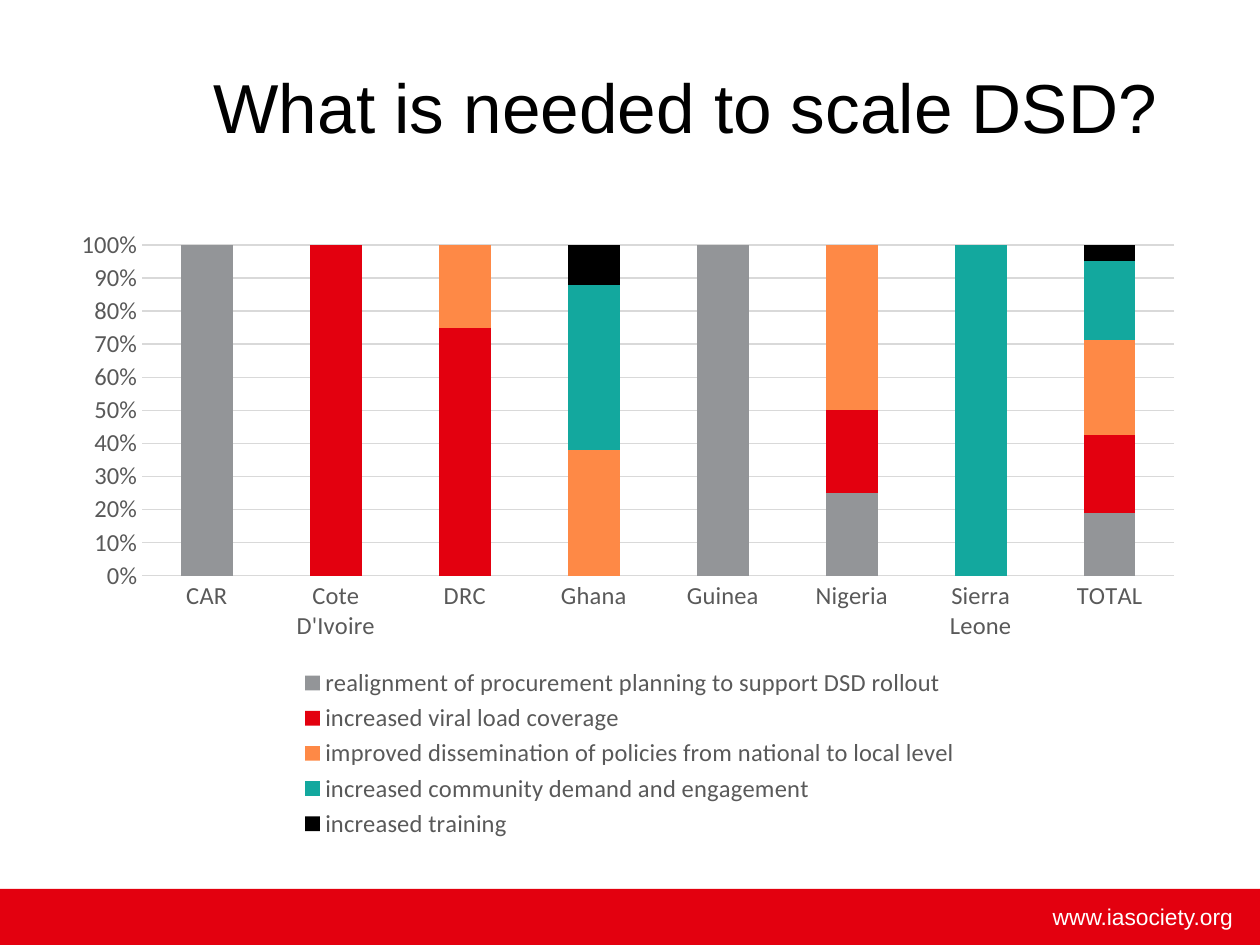
from lxml import etree
from pptx import Presentation
from pptx.chart.data import CategoryChartData
from pptx.dml.color import RGBColor
from pptx.enum.chart import XL_CHART_TYPE as ChartType, XL_LEGEND_POSITION as LegendPosition
from pptx.enum.chart import XL_TICK_MARK as TickMark
from pptx.enum.shapes import MSO_SHAPE as Preset
from pptx.enum.text import MSO_ANCHOR as Anchor, PP_ALIGN as Align
from pptx.oxml.ns import qn
from pptx.util import Pt

EMU_PER_PX = 914400 / 126
RED = RGBColor(0xE3, 0x00, 0x0F)
GREY = RGBColor(0x93, 0x95, 0x98)
ORANGE = RGBColor(0xFE, 0x89, 0x46)
TEAL = RGBColor(0x13, 0xA8, 0x9E)
BLACK = RGBColor(0x00, 0x00, 0x00)
WHITE = RGBColor(0xFF, 0xFF, 0xFF)
LABEL = RGBColor(0x59, 0x59, 0x59)
GRID = RGBColor(0xD9, 0xD9, 0xD9)

COUNTRIES = ["CAR", "Cote D'Ivoire", "DRC", "Ghana", "Guinea", "Nigeria", "Sierra Leone", "TOTAL"]
NEEDS = [
    ("realignment of procurement planning to support DSD rollout", GREY,
     [100, None, None, None, 100, 25, None, 19]),
    ("increased viral load coverage", RED,
     [None, 100, 75, None, None, 25, None, 24]),
    ("improved dissemination of policies from national to local level", ORANGE,
     [None, None, 25, 38, None, 50, None, 29]),
    ("increased community demand and engagement", TEAL,
     [None, None, None, 50, None, None, 100, 24]),
    ("increased training", BLACK,
     [None, None, None, 12, None, None, None, 5]),
]


def px(length):
    return round(length * EMU_PER_PX)


class SlideBuilder:
    text_face = "Arial"
    chart_face = "Calibri"
    chart_size = 14

    def __init__(self, slide):
        self.slide = slide

    def style(self, font, face, size, color):
        font.name = face
        font.size = Pt(size)
        font.color.rgb = color

    def bar(self, left, top, width, height, color):
        band = self.slide.shapes.add_shape(Preset.RECTANGLE, px(left), px(top), px(width), px(height))
        band.shadow.inherit = False
        band.fill.solid()
        band.fill.fore_color.rgb = color
        band.line.fill.background()

    def text(self, wording, left, top, width, height, size, color, align):
        frame = self.slide.shapes.add_textbox(px(left), px(top), px(width), px(height)).text_frame
        frame.word_wrap = True
        frame.vertical_anchor = Anchor.MIDDLE
        frame.text = wording
        paragraph = frame.paragraphs[0]
        paragraph.alignment = align
        self.style(paragraph.runs[0].font, self.text_face, size, color)

    def place(self, parent, index, target, **fractions):
        for old in parent.findall(qn("c:layout")):
            parent.remove(old)
        layout = etree.Element(qn("c:layout"))
        manual = etree.SubElement(layout, qn("c:manualLayout"))
        if target:
            etree.SubElement(manual, qn("c:layoutTarget")).set("val", target)
        for mode in ("xMode", "yMode"):
            etree.SubElement(manual, qn(f"c:{mode}")).set("val", "edge")
        for side, fraction in fractions.items():
            etree.SubElement(manual, qn(f"c:{side}")).set("val", str(fraction))
        parent.insert(index, layout)

    def stacked_chart(self, categories, series_rows, left, top, width, height):
        data = CategoryChartData()
        data.categories = categories
        for name, _, values in series_rows:
            data.add_series(name, values)
        chart = self.slide.shapes.add_chart(
            ChartType.COLUMN_STACKED_100, px(left), px(top), px(width), px(height), data).chart
        chart.has_title = False
        self.style(chart.font, self.chart_face, self.chart_size, LABEL)

        plot = chart.plots[0]
        plot.gap_width = 150
        plot.overlap = 100
        plot.vary_by_categories = False
        for series, (_, color, _) in zip(plot.series, series_rows):
            series.format.fill.solid()
            series.format.fill.fore_color.rgb = color

        for axis in (chart.category_axis, chart.value_axis):
            axis.major_tick_mark = TickMark.NONE
            axis.minor_tick_mark = TickMark.NONE
            self.style(axis.tick_labels.font, self.chart_face, self.chart_size, LABEL)
        chart.value_axis.tick_labels.number_format = "0%"
        chart.value_axis.tick_labels.number_format_is_linked = False
        chart.value_axis.has_major_gridlines = True
        chart.value_axis.format.line.fill.background()
        for line in (chart.category_axis.format.line, chart.value_axis.major_gridlines.format.line):
            line.color.rgb = GRID
            line.width = Pt(0.75)

        chart.has_legend = True
        legend = chart.legend
        legend.position = LegendPosition.BOTTOM
        legend.include_in_layout = False
        self.style(legend.font, self.chart_face, self.chart_size, LABEL)
        plot_area = chart.element.find(".//" + qn("c:plotArea"))
        self.place(plot_area, 0, "inner", x=0.07, y=0.04, w=0.91, h=0.53)
        legend_box = chart.element.find(".//" + qn("c:legend"))
        self.place(legend_box, 1, None, x=0.21, y=0.71, w=0.58, h=0.29)


def main():
    deck = Presentation()
    deck.slide_width = px(1260)
    deck.slide_height = px(945)
    builder = SlideBuilder(deck.slides.add_slide(deck.slide_layouts[6]))
    builder.bar(0, 889, 1260, 56, RED)
    builder.text("www.iasociety.org", 828, 896, 417, 40, 13, WHITE, Align.RIGHT)
    builder.text("What is needed to scale DSD?", 174, 27, 1023, 158, 39.6, BLACK, Align.CENTER)
    builder.stacked_chart(COUNTRIES, NEEDS, 63, 220, 1134, 624)
    deck.save("out.pptx")


if __name__ == "__main__":
    main()
